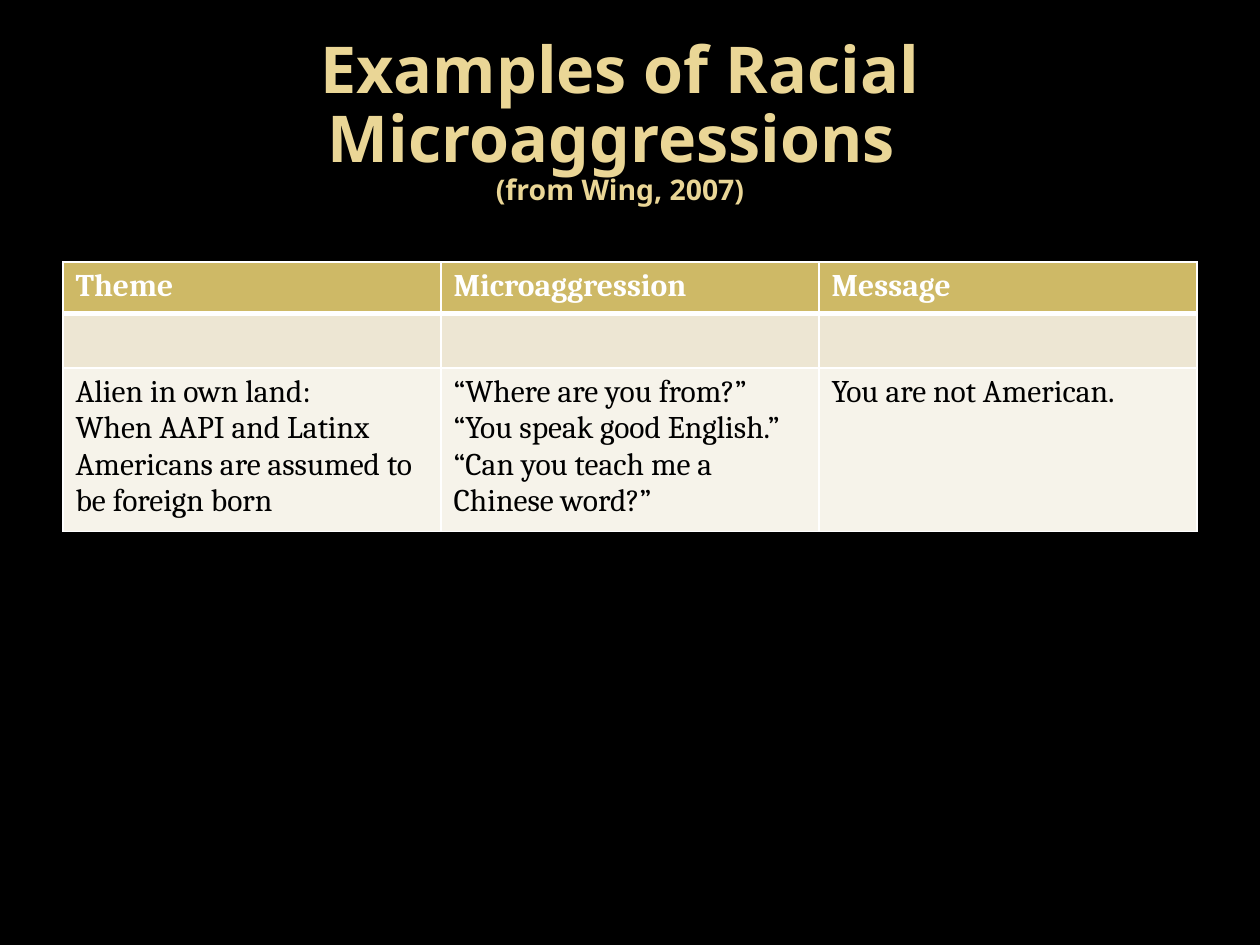
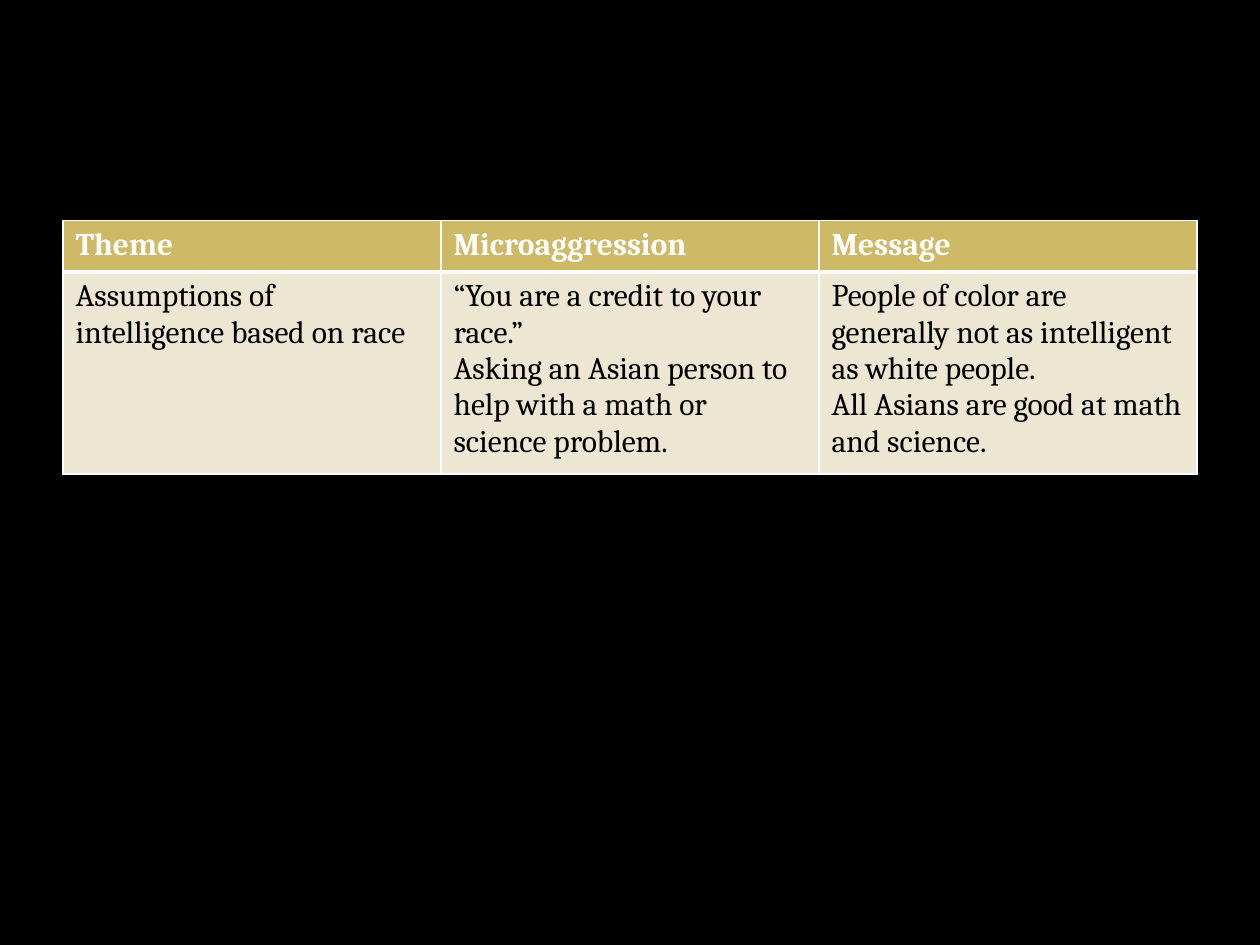
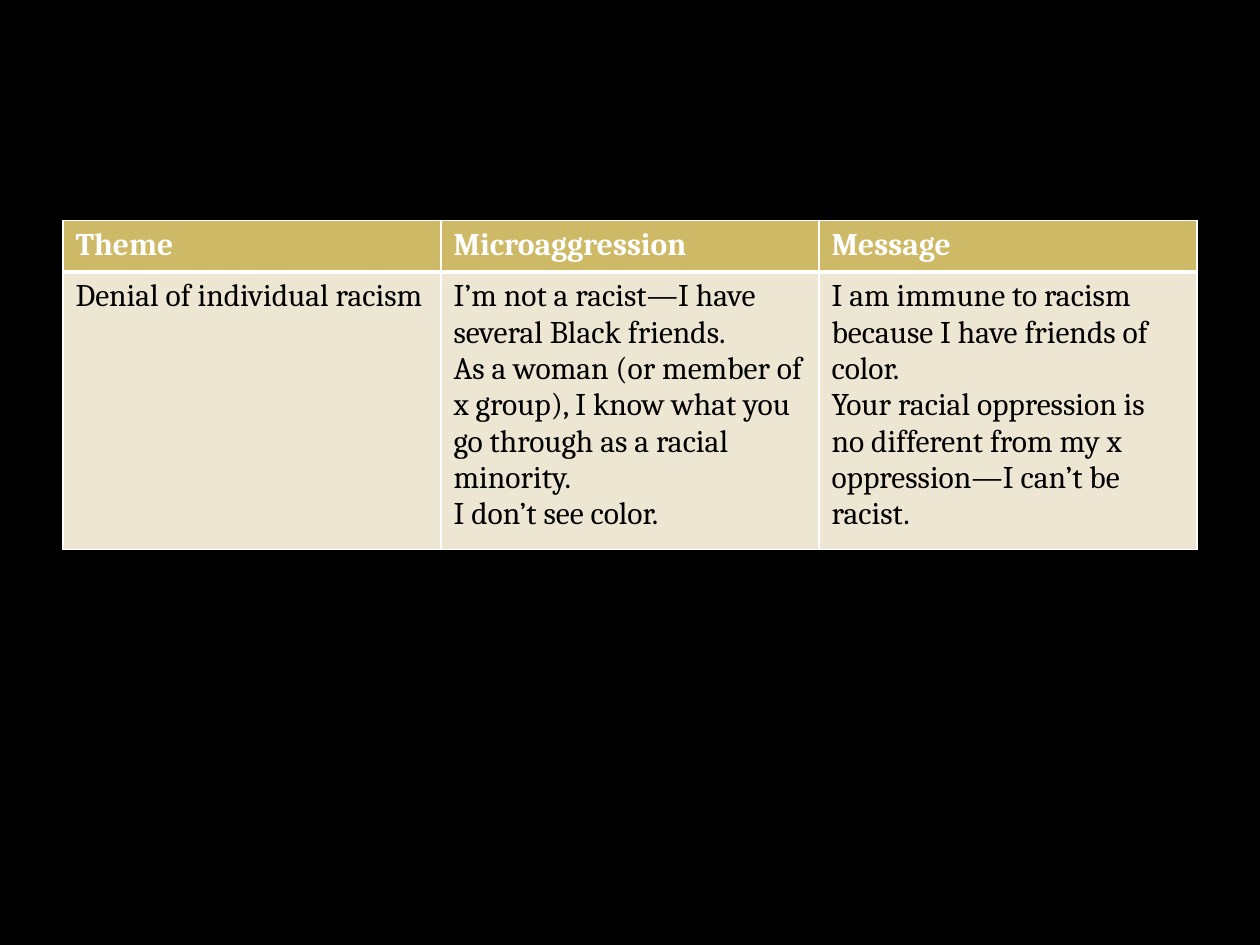
from pptx import Presentation
from pptx.dml.color import RGBColor
from pptx.enum.text import MSO_ANCHOR, PP_ALIGN
from pptx.oxml.ns import qn
from pptx.util import Inches, Pt
from lxml.etree import SubElement

COLORS = {
    "background": "000000",
    "title": "EAD696",
    "header": "CEB966",
    "band_dark": "EDE6D3",
    "band_light": "F6F3EA",
    "light": "FFFFFF",
    "dark": "000000",
}
TITLE_FONT = "Noto Sans"
TABLE_FONT = "Cambria"
HEADINGS = ["Theme", "Microaggression", "Message"]
ROW_HEIGHT = 0.41

ALIEN_ROWS = [
    [[], [], []],
    [
        ["Alien in own land:", "When AAPI and Latinx Americans are assumed to be foreign born"],
        ["“Where are you from?”", "“You speak good English.”", "“Can you teach me a Chinese word?”"],
        ["You are not American."],
    ],
]
INTELLIGENCE_ROWS = [
    [
        ["Assumptions of intelligence based on race"],
        [
            "“You are a credit to your race.”",
            "Asking an Asian person to help with a math or science problem.",
        ],
        [
            "People of color are generally not as intelligent as white people.",
            "All Asians are good at math and science.",
        ],
    ],
]
DENIAL_ROWS = [
    [
        ["Denial of individual racism"],
        [
            "I’m not a racist—I have several Black friends.",
            "As a woman (or member of x group), I know what you go through as a racial minority.",
            "I don’t see color.",
        ],
        [
            "I am immune to racism because I have friends of color.",
            "Your racial oppression is no different from my x oppression—I can’t be racist.",
        ],
    ],
]


def color(name):
    """Return the named palette colour."""
    return RGBColor.from_string(COLORS[name])


def add_page(deck):
    """Add a blank page with the shared background."""
    page = deck.slides.add_slide(deck.slide_layouts[6])
    page.background.fill.solid()
    page.background.fill.fore_color.rgb = color("background")
    return page


def add_span(para, text, font, size, color_name, bold):
    """Append one formatted run to a paragraph."""
    span = para.add_run()
    span.text = text
    span.font.name = font
    span.font.size = Pt(size)
    span.font.bold = bold
    span.font.color.rgb = color(color_name)


def add_title(page, heading, credit):
    """Add a centred title with a smaller credit line below it."""
    box = page.shapes.add_textbox(Inches(0.42), Inches(0.25), Inches(9), Inches(1.45))
    frame = box.text_frame
    frame.word_wrap = True
    frame.vertical_anchor = MSO_ANCHOR.MIDDLE
    para = frame.paragraphs[0]
    para.alignment = PP_ALIGN.CENTER
    para.line_spacing = 0.89
    add_span(para, heading, TITLE_FONT, 36.9, "title", True)
    para.add_line_break()
    add_span(para, credit, TITLE_FONT, 16.2, "title", True)


def set_borders(cell, widths):
    """Draw solid light borders, given as a side-to-points mapping."""
    properties = cell._tc.get_or_add_tcPr()
    for position, (side, width) in enumerate(widths.items()):
        line = properties.makeelement(qn(f"a:ln{side}"), {"w": str(Pt(width))})
        fill = SubElement(line, qn("a:solidFill"))
        SubElement(fill, qn("a:srgbClr"), val=COLORS["light"])
        properties.insert(position, line)


def fill_cell(cell, lines, fill_name, text_name, bold):
    """Fill a cell and write one paragraph for each line of text."""
    cell.fill.solid()
    cell.fill.fore_color.rgb = color(fill_name)
    frame = cell.text_frame
    for index, text in enumerate(lines):
        para = frame.add_paragraph() if index else frame.paragraphs[0]
        add_span(para, text, TABLE_FONT, 18, text_name, bold)


def add_theme_table(page, top, height, body, row_heights):
    """Add a table of themes with a header row and banded body rows."""
    shape = page.shapes.add_table(
        len(body) + 1, len(HEADINGS), Inches(0.5), Inches(top), Inches(9), Inches(height)
    )
    table = shape.table
    table.horz_banding = False
    for row, row_height in zip(table.rows, row_heights):
        row.height = Inches(row_height)
    shape.height = Inches(height)
    for column, heading in enumerate(HEADINGS):
        cell = table.cell(0, column)
        fill_cell(cell, [heading], "header", "light", True)
        set_borders(cell, {"L": 1, "R": 1, "T": 1, "B": 3})
    for number, entries in enumerate(body, start=1):
        band = "band_dark" if number % 2 else "band_light"
        for column, lines in enumerate(entries):
            cell = table.cell(number, column)
            fill_cell(cell, lines, band, "dark", False)
            set_borders(cell, {"L": 1, "R": 1, "B": 1})


def main():
    """Build and save the deck."""
    deck = Presentation()
    deck.slide_width = Inches(10)
    deck.slide_height = Inches(7.5)

    page = add_page(deck)
    add_title(page, "Examples of Racial Microaggressions ", "(from Wing, 2007)")
    add_theme_table(page, 2.08, 2.43, ALIEN_ROWS, [ROW_HEIGHT, 0.43, ROW_HEIGHT])

    for body, height in ((INTELLIGENCE_ROWS, 2.31), (DENIAL_ROWS, 2.61)):
        add_theme_table(add_page(deck), 1.75, height, body, [ROW_HEIGHT] * 2)

    deck.save("out.pptx")


if __name__ == "__main__":
    main()
